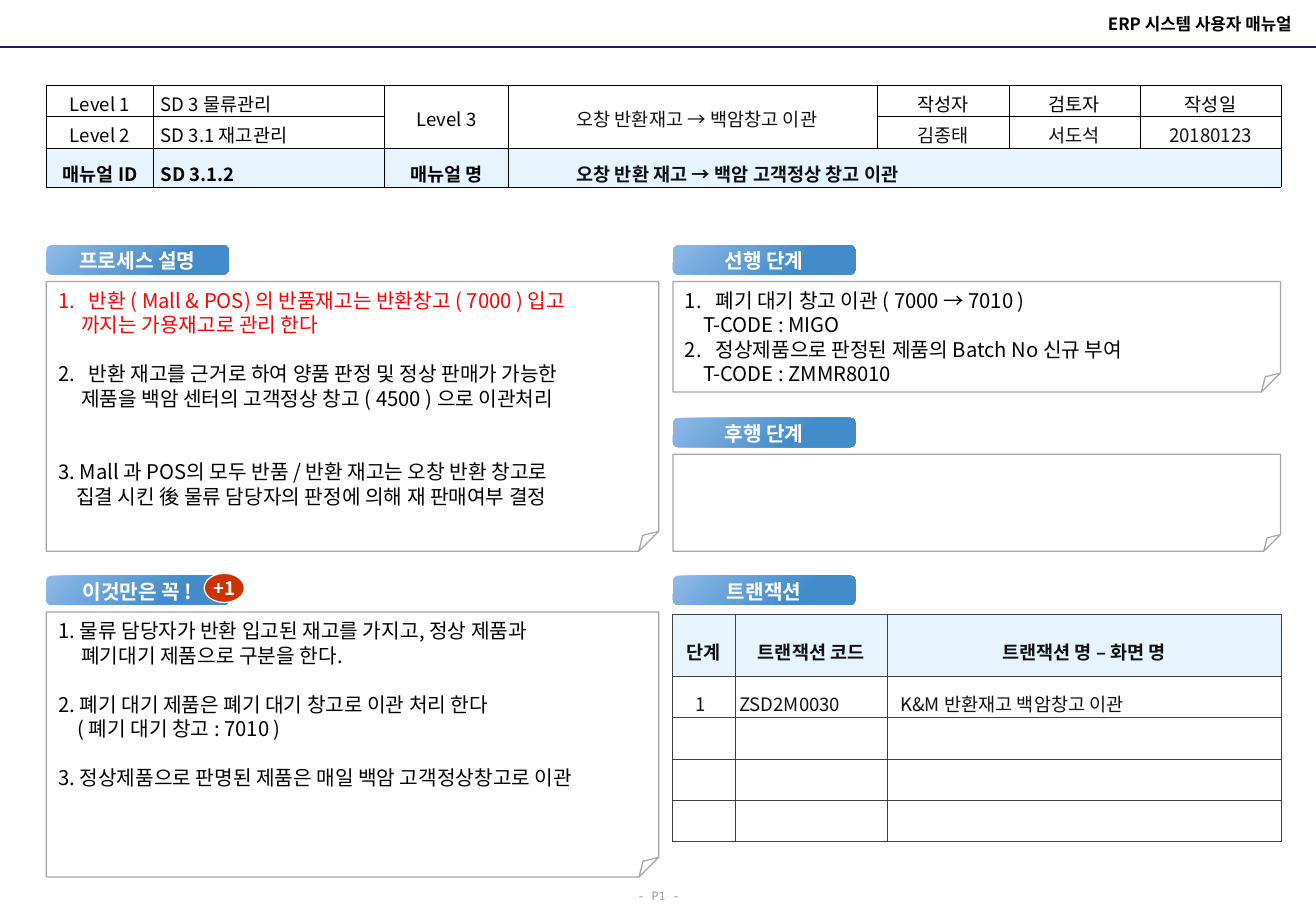
from lxml.etree import SubElement
from pptx import Presentation
from pptx.dml.color import RGBColor
from pptx.enum.shapes import MSO_CONNECTOR, MSO_SHAPE
from pptx.enum.text import MSO_ANCHOR as ANCHOR, PP_ALIGN as ALIGN
from pptx.oxml.ns import qn
from pptx.util import Cm, Pt

BLACK = RGBColor(0x00, 0x00, 0x00)
INK = RGBColor(0x11, 0x11, 0x11)
WHITE = RGBColor(0xFF, 0xFF, 0xFF)
RED = RGBColor(0xFF, 0x00, 0x00)
BADGE = RGBColor(0xCC, 0x33, 0x00)
NAVY = RGBColor(0x19, 0x19, 0x66)
GRAY = RGBColor(0xA6, 0xA6, 0xA6)
FOOTER = RGBColor(0x96, 0x96, 0x96)
GRID = RGBColor(0x40, 0x40, 0x40)
PALE = RGBColor(0xE6, 0xF4, 0xFE)
LABEL_LIGHT = RGBColor(0x90, 0xBA, 0xE8)
LABEL_DARK = RGBColor(0x42, 0x8C, 0xC9)


class Deck:
    font = "Noto Sans CJK KR"
    mono = "Noto Sans Mono"
    line_pitch = Pt(14.5)
    cell_pitch = Pt(17)

    def __init__(self, width, height):
        self.prs = Presentation()
        self.prs.slide_width, self.prs.slide_height = Cm(width), Cm(height)
        self.s = self.prs.slides.add_slide(self.prs.slide_layouts[6])

    def run(self, p, text, size, color, bold=False, font=None):
        r = p.add_run()
        r.text = text
        r.font.name = font or self.font
        r.font.size, r.font.bold = Pt(size), bold
        r.font.color.rgb = color
        SubElement(r.font._element, qn("a:ea")).set("typeface", font or self.font)

    def frame(self, sp, anchor, wrap=True, inset=(0, 0, 0, 0)):
        tf = sp.text_frame
        tf.word_wrap, tf.vertical_anchor = wrap, anchor
        (tf.margin_left, tf.margin_top,
         tf.margin_right, tf.margin_bottom) = map(Cm, inset)
        return tf

    def rule(self, y, color, width):
        c = self.s.shapes.add_connector(
            MSO_CONNECTOR.STRAIGHT, 0, Cm(y), self.prs.slide_width, Cm(y))
        c.line.color.rgb, c.line.width = color, Pt(width)
        SubElement(c._element.spPr, qn("a:effectLst"))

    def text(self, box, text, size, color, align, bold=False, font=None):
        sp = self.s.shapes.add_textbox(*map(Cm, box))
        tf = self.frame(sp, ANCHOR.MIDDLE, inset=(0, 0, 0.25, 0) if bold else (0, 0, 0, 0))
        p = tf.paragraphs[0]
        p.alignment = align
        self.run(p, text, size, color, bold, font)

    def shape(self, kind, box, line=None):
        sp = self.s.shapes.add_shape(kind, *map(Cm, box))
        sp.shadow.inherit = False
        if line is None:
            sp.line.fill.background()
        else:
            sp.line.color.rgb, sp.line.width = line, Pt(0.75)
        return sp

    def label(self, x, y, text):
        sp = self.shape(MSO_SHAPE.ROUNDED_RECTANGLE, (x, y, 3.81, 0.61))
        sp.fill.gradient()
        sp.fill.gradient_angle = 315
        start, end = sp.fill.gradient_stops
        start.color.rgb, end.color.rgb = LABEL_LIGHT, LABEL_DARK
        end.position = 0.7
        p = self.frame(sp, ANCHOR.BOTTOM).paragraphs[0]
        p.alignment, p.line_spacing = ALIGN.CENTER, self.line_pitch
        self.run(p, text, 12, WHITE, True)

    def badge(self, box, text):
        sp = self.shape(MSO_SHAPE.OVAL, box, WHITE)
        sp.fill.solid()
        sp.fill.fore_color.rgb = BADGE
        p = self.frame(sp, ANCHOR.MIDDLE, wrap=False).paragraphs[0]
        p.alignment = ALIGN.CENTER
        self.run(p, text, 11, WHITE, True)

    def note(self, box, fold, lines=()):
        sp = self.shape(MSO_SHAPE.FOLDED_CORNER, box, GRAY)
        guides = sp._element.spPr.find(qn("a:prstGeom")).get_or_add_avLst()
        SubElement(guides, qn("a:gd"), name="adj", fmla=f"val {round(fold * 100000)}")
        sp.fill.background()
        tf = self.frame(sp, ANCHOR.TOP, inset=(0.25, 0.13, 0.25, 0.13))
        for i, (text, indent, number, gap, color) in enumerate(lines):
            p = tf.add_paragraph() if i else tf.paragraphs[0]
            p.alignment, p.line_spacing = ALIGN.LEFT, self.line_pitch
            if gap:
                p.space_before = Pt(gap * self.line_pitch.pt)
            pPr = p._p.get_or_add_pPr()
            pPr.set("marL", str(Cm(indent)))
            pPr.set("indent", str(-Cm(indent) if number else 0))
            if number:
                bu = SubElement(pPr, qn("a:buAutoNum"))
                bu.set("type", "arabicPeriod")
                bu.set("startAt", str(number))
            self.run(p, text, 12, color)

    def table(self, x, y, cols, rows, border):
        t = self.s.shapes.add_table(len(rows), len(cols), Cm(x), Cm(y),
                                    Cm(sum(cols)), Cm(sum(rows))).table
        t.first_row = t.horz_banding = False
        for col, w in zip(t.columns, cols):
            col.width = Cm(w)
        for row, h in zip(t.rows, rows):
            row.height = Cm(h)
        for cell in t.iter_cells():
            tcPr = cell._tc.get_or_add_tcPr()
            for side in ("lnL", "lnR", "lnT", "lnB"):
                ln = SubElement(tcPr, qn(f"a:{side}"), w=str(Pt(0.5)))
                fill = SubElement(ln, qn("a:solidFill"))
                SubElement(fill, qn("a:srgbClr"), val=str(border))
        return t

    def cell(self, cell, text, fill, color=INK, bold=False, left=None,
             anchor=ANCHOR.BOTTOM, top=0.02):
        cell.fill.solid()
        cell.fill.fore_color.rgb = fill
        cell.vertical_anchor = anchor
        cell.margin_left = Cm(left or 0.15)
        cell.margin_right, cell.margin_top, cell.margin_bottom = Cm(0.15), Cm(top), 0
        p = cell.text_frame.paragraphs[0]
        if not text:
            SubElement(p._p, qn("a:endParaRPr"), sz="1100")
            return
        p.alignment = ALIGN.CENTER if left is None else ALIGN.LEFT
        p.line_spacing = self.cell_pitch
        self.run(p, text, 11, color, bold)


def main():
    d = Deck(27.51, 19.05)
    left, right = 0.97, 14.07

    d.text((13.06, 18.42, 1.42, 0.64), "- P1 -", 7, FOOTER, ALIGN.CENTER, font=d.mono)
    d.rule(0.98, NAVY, 1.5)
    d.text((15.34, 0.15, 11.91, 0.69), "ERP 시스템 사용자 매뉴얼", 10, BLACK, ALIGN.RIGHT, True)

    steps = d.table(14.05, 12.85, (1.32, 3.18, 8.23), (1.3,) + (0.86,) * 4, GRID)
    step_rows = [("단계", "트랜잭션 코드", "트랜잭션 명 – 화면 명"),
                 ("1", "ZSD2M0030", "K&M 반환재고 백암창고 이관")] + [("", "", "")] * 3
    for i, row in enumerate(step_rows):
        for j, text in enumerate(row):
            d.cell(steps.cell(i, j), text, WHITE if i else PALE, bold=i == 0,
                   left=(0.48, 0.08, 0.27)[j] if i else None,
                   anchor=ANCHOR.MIDDLE, top=0.2)

    for x, y, text in ((left, 5.13, "프로세스 설명"), (right, 5.13, "선행 단계"),
                       (right, 8.74, "후행 단계"), (right, 12.04, "트랜잭션"),
                       (left, 12.04, "이것만은 꼭 !")):
        d.label(x, y, text)
    d.badge((4.27, 11.99, 0.84, 0.61), "+1")

    d.note((left, 5.89, 12.8, 5.64), 0.074, [
        ("반환 ( Mall & POS) 의 반품재고는 반환창고 ( 7000 ) 입고", 0.64, 1, 0, RED),
        ("까지는 가용재고로 관리 한다", 0.48, 0, 0, RED),
        ("반환 재고를 근거로 하여 양품 판정 및 정상 판매가 가능한", 0.64, 2, 1, BLACK),
        ("제품을 백암 센터의 고객정상 창고 ( 4500 ) 으로 이관처리", 0.48, 0, 0, BLACK),
        ("3. Mall 과 POS의 모두 반품 / 반환 재고는 오창 반환 창고로", 0, 0, 2, BLACK),
        ("집결 시킨 後 물류 담당자의 판정에 의해 재 판매여부 결정", 0.37, 0, 0, BLACK)])
    d.note((right, 5.89, 12.7, 2.31), 0.173, [
        ("폐기 대기 창고 이관 ( 7000 → 7010 )", 0.64, 1, 0, BLACK),
        ("T-CODE : MIGO", 0.38, 0, 0, BLACK),
        ("정상제품으로 판정된 제품의 Batch No 신규 부여", 0.64, 2, 0, BLACK),
        ("T-CODE : ZMMR8010", 0.38, 0, 0, BLACK)])
    d.note((right, 9.5, 12.7, 2.03), 0.173)
    d.note((left, 12.8, 12.8, 5.54), 0.074, [
        ("1. 물류 담당자가 반환 입고된 재고를 가지고, 정상 제품과", 0, 0, 0, BLACK),
        ("폐기대기 제품으로 구분을 한다.", 0.48, 0, 0, BLACK),
        ("2. 폐기 대기 제품은 폐기 대기 창고로 이관 처리 한다", 0, 0, 1, BLACK),
        ("( 폐기 대기 창고 : 7010 )", 0.4, 0, 0, BLACK),
        ("3. 정상제품으로 판명된 제품은 매일 백암 고객정상창고로 이관", 0, 0, 1, BLACK)])

    head = d.table(left, 1.78, (2.24, 4.83, 2.59, 7.72, 2.74, 2.74, 2.95),
                   (0.66, 0.66, 0.81), BLACK)
    head_rows = [
        ("Level 1", "SD 3 물류관리", "Level 3", "오창 반환재고 → 백암창고 이관",
         "작성자", "검토자", "작성일"),
        ("Level 2", "SD 3.1 재고관리", "", "", "김종태", "서도석", "20180123"),
        ("매뉴얼 ID", "SD 3.1.2", "매뉴얼 명", "오창 반환 재고 → 백암 고객정상 창고 이관",
         "", "", "")]
    for i, row in enumerate(head_rows):
        for j, text in enumerate(row):
            spans = i == 0 and j in (2, 3)
            d.cell(head.cell(i, j), text, PALE if i == 2 else WHITE,
                   INK if j == 3 or i == 1 and j > 3 else BLACK, i == 2,
                   {1: 0.15, 3: 1.42}.get(j), ANCHOR.MIDDLE if spans else ANCHOR.BOTTOM,
                   0.02)
    for start, end in (((0, 2), (1, 2)), ((0, 3), (1, 3)), ((2, 3), (2, 6))):
        head.cell(*start).merge(head.cell(*end))

    d.prs.save("out.pptx")


if __name__ == "__main__":
    main()
